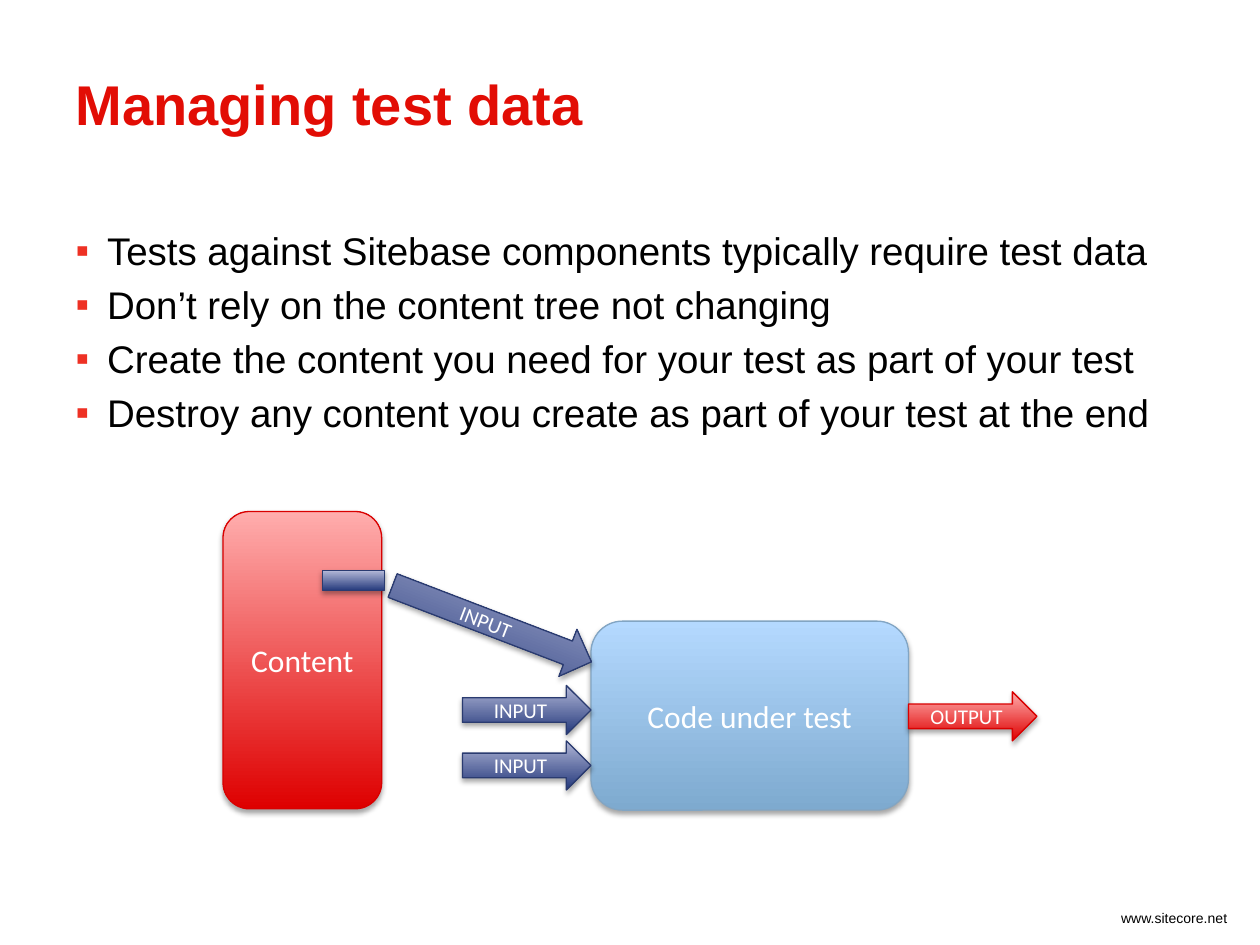
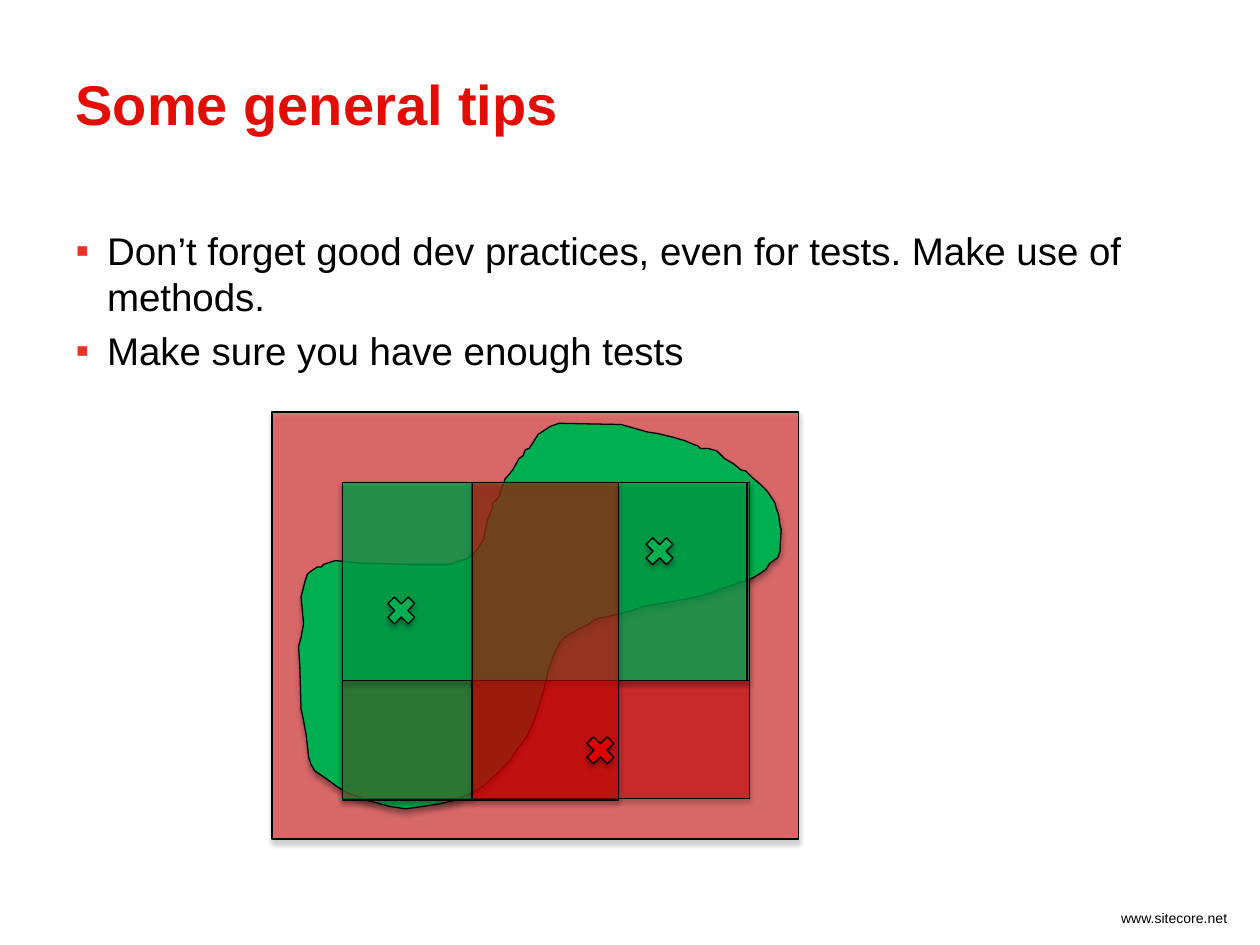
from dataclasses import dataclass

from lxml import etree
from pptx import Presentation
from pptx import util as u
from pptx.dml.color import RGBColor
from pptx.enum import shapes, text
from pptx.oxml import ns

EMU_PER_PX = 9144
SHAPE = shapes.MSO_SHAPE
ALIGN = text.PP_ALIGN
ANCHOR = text.MSO_ANCHOR


@dataclass(frozen=True)
class Theme:
    """Colours, fonts and type sizes shared by the slides."""

    title_red: str = "E20D05"
    bullet_red: str = "EE3124"
    black: str = "000000"
    white: str = "FFFFFF"
    red: str = "DE0000"
    green: str = "00B050"
    red_gradient: tuple = ("DE0000", "FFADAD", "D90000")
    navy_gradient: tuple = ("23387B", "B1B6D6", "2A3B70")
    sky_gradient: tuple = ("7EAACF", "B4D9FF", "82A5C3")
    text_font: str = "Arial"
    diagram_font: str = "Calibri"
    title_size: int = 32
    body_size: int = 22
    box_size: int = 18
    arrow_size: int = 12
    footer_size: int = 8
    line_width: float = 0.75


THEME = Theme()
SLIDE_SIZE = (1000, 750)
TITLE_BOX = (50, 50, 900, 109)
FOOTER_BOX = (450, 717, 534, 37)
FOOTER_TEXT = "www.sitecore.net"

COVERAGE_OUTLINE = [
    (23, 147), (26, 135), (28, 129), (30, 127), (36, 123), (39, 123), (41, 121),
    (47, 119), (50, 118), (61, 119), (69, 120), (108, 121), (141, 121), (149, 118),
    (154, 117), (159, 113), (163, 109), (166, 104), (168, 101), (169, 95), (170, 91),
    (171, 86), (173, 81), (175, 76), (175, 72), (178, 70), (180, 67), (182, 61),
    (184, 56), (185, 53), (187, 51), (191, 46), (196, 37), (199, 35), (201, 30),
    (204, 29), (208, 23), (211, 18), (220, 12), (222, 11), (228, 9), (277, 10),
    (291, 14), (298, 16), (305, 17), (318, 20), (328, 23), (335, 26), (338, 27),
    (340, 29), (346, 29), (353, 31), (359, 37), (366, 41), (372, 46), (376, 47),
    (381, 52), (387, 57), (393, 63), (399, 72), (400, 76), (402, 82), (403, 90),
    (404, 93), (403, 111), (401, 116), (395, 120), (392, 125), (386, 129), (381, 132),
    (369, 136), (358, 140), (341, 146), (325, 149), (309, 152), (296, 154), (284, 158),
    (268, 162), (258, 164), (250, 169), (240, 174), (232, 179), (228, 184), (223, 194),
    (219, 206), (215, 223), (212, 233), (208, 245), (202, 258), (195, 267), (189, 276),
    (184, 282), (173, 292), (165, 299), (159, 302), (146, 308), (133, 311), (120, 313),
    (106, 315), (93, 313), (75, 308), (59, 302), (51, 297), (43, 291), (34, 285),
    (31, 280), (29, 274), (27, 256), (24, 240), (23, 236), (22, 202), (21, 186),
    (23, 179), (25, 168),
]


def px(length):
    """Turn px into EMU."""
    return u.Emu(length * EMU_PER_PX)


def apply(target, values):
    """Set each named attribute on the target."""
    for name, value in values.items():
        setattr(target, name, value)


def place(shape, box):
    """Move and size a shape to a px box."""
    apply(shape, dict(zip(("left", "top", "width", "height"), map(px, box))))


def write(paragraph, words, size, color, font=THEME.text_font, bold=False):
    """Add one formatted run to a paragraph."""
    run = paragraph.add_run()
    run.text = words
    apply(run.font, {"name": font, "size": u.Pt(size), "bold": bold})
    run.font.color.rgb = RGBColor.from_string(color)


def add_bullet(paragraph):
    """Give a paragraph a hanging square bullet."""
    properties = paragraph._p.get_or_add_pPr()
    apply_indent = {"marL": px(25), "indent": -px(25)}
    for name, value in apply_indent.items():
        properties.set(name, str(value))
    color = etree.SubElement(properties, ns.qn("a:buClr"))
    etree.SubElement(color, ns.qn("a:srgbClr"), val=THEME.bullet_red)
    etree.SubElement(properties, ns.qn("a:buFont"), typeface=THEME.text_font)
    etree.SubElement(properties, ns.qn("a:buChar"), char="▪")


def add_text_slide(presentation, title, bullets, body_height):
    """Add a slide with its title, bullet list and footer."""
    slide = presentation.slides.add_slide(presentation.slide_layouts[1])
    heading, body = slide.placeholders
    footer = slide.shapes.add_textbox(*map(px, FOOTER_BOX))
    boxes = (TITLE_BOX, (50, 175, 900, body_height), FOOTER_BOX)
    for shape, box in zip((heading, body, footer), boxes):
        place(shape, box)
        apply(shape.text_frame, {
            "word_wrap": True,
            "auto_size": text.MSO_AUTO_SIZE.NONE,
            "vertical_anchor": ANCHOR.TOP,
        })

    paragraph = heading.text_frame.paragraphs[0]
    paragraph.alignment = ALIGN.LEFT
    write(paragraph, title, THEME.title_size, THEME.title_red, bold=True)

    for index, words in enumerate(bullets):
        frame = body.text_frame
        paragraph = frame.add_paragraph() if index else frame.paragraphs[0]
        add_bullet(paragraph)
        paragraph.space_before = u.Pt(4.5 if index else 0)
        write(paragraph, words, THEME.body_size, THEME.black)

    paragraph = footer.text_frame.paragraphs[0]
    paragraph.alignment = ALIGN.RIGHT
    write(paragraph, FOOTER_TEXT, THEME.footer_size, THEME.black)
    return slide


def finish(shape, line_color):
    """Give a shape its outline and soft drop shadow."""
    shape.line.color.rgb = RGBColor.from_string(line_color)
    shape.line.width = u.Pt(THEME.line_width)
    shape.shadow.inherit = False
    effects = shape.element.spPr.find(ns.qn("a:effectLst"))
    shadow = etree.SubElement(
        effects, ns.qn("a:outerShdw"), blurRad=str(u.Pt(3.1)),
        dist=str(u.Pt(1.8)), dir="5400000", rotWithShape="0")
    color = etree.SubElement(shadow, ns.qn("a:srgbClr"), val=THEME.black)
    etree.SubElement(color, ns.qn("a:alpha"), val="35000")


def fill_flat(shape, color, opacity=100):
    """Fill a shape with one colour and outline it in black."""
    shape.fill.solid()
    shape.fill.fore_color.rgb = RGBColor.from_string(color)
    if opacity < 100:
        solid = shape.element.spPr.find(ns.qn("a:solidFill"))
        etree.SubElement(solid[0], ns.qn("a:alpha"), val=str(opacity * 1000))
    finish(shape, THEME.black)


def fill_gradient(shape, gradient):
    """Fill a shape from dark at the bottom to light at the top."""
    dark, light, line_color = gradient
    shape.fill.gradient()
    shape.fill.gradient_angle = 90
    for stop, color in zip(shape.fill.gradient_stops, (dark, light)):
        stop.color.rgb = RGBColor.from_string(color)
    finish(shape, line_color)


def add_preset(slide, kind, origin, box):
    """Add a preset shape in a box relative to the origin."""
    left, top, width, height = box
    bounds = (origin[0] + left, origin[1] + top, width, height)
    return slide.shapes.add_shape(kind, *map(px, bounds))


def draw_data_flow(slide, box):
    """Draw content and inputs flowing through the code under test."""
    box_size, arrow_size = THEME.box_size, THEME.arrow_size
    navy, red, sky = THEME.navy_gradient, THEME.red_gradient, THEME.sky_gradient
    rounded, arrow = SHAPE.ROUNDED_RECTANGLE, SHAPE.RIGHT_ARROW
    parts = [
        (rounded, (292, 87, 252, 150), sky, "Code under test", box_size, 0),
        (arrow, (190, 138, 102, 39), navy, "INPUT", arrow_size, 0),
        (arrow, (190, 182, 102, 39), navy, "INPUT", arrow_size, 0),
        (arrow, (544, 143, 102, 39), red, "OUTPUT", arrow_size, 0),
        (rounded, (0, 0, 126, 236), red, "Content", box_size, 0),
        (arrow, (129, 69, 169, 40), navy, "INPUT", arrow_size, 21),
        (SHAPE.RECTANGLE, (79, 47, 49, 16), navy, "", arrow_size, 0),
    ]
    for kind, part_box, gradient, label, size, rotation in parts:
        shape = add_preset(slide, kind, box, part_box)
        shape.rotation = rotation
        fill_gradient(shape, gradient)
        if label:
            shape.text_frame.vertical_anchor = ANCHOR.MIDDLE
            paragraph = shape.text_frame.paragraphs[0]
            paragraph.alignment = ALIGN.CENTER
            write(paragraph, label, size, THEME.white, THEME.diagram_font)


def draw_coverage_map(slide, box):
    """Draw the working region, the tested zones and the test points."""
    left, top, width, height = box
    background = add_preset(slide, SHAPE.RECTANGLE, box, (0, 0, width, height))
    fill_flat(background, THEME.red, 50)

    builder = slide.shapes.build_freeform(*COVERAGE_OUTLINE[0], scale=EMU_PER_PX)
    builder.add_line_segments(COVERAGE_OUTLINE[1:], close=True)
    fill_flat(builder.convert_to_shape(px(left), px(top)), THEME.green)

    zone, cross = (SHAPE.RECTANGLE, 50), (SHAPE.MATH_MULTIPLY, 100)
    parts = [
        (zone, (56, 213, 323, 94), THEME.red),
        (zone, (56, 56, 102, 252), THEME.green),
        (zone, (56, 56, 323, 157), THEME.green),
        (zone, (275, 56, 102, 157), THEME.green),
        (cross, (87, 142, 31, 31), THEME.green),
        (zone, (159, 56, 116, 252), THEME.red),
        (cross, (292, 95, 31, 31), THEME.green),
        (cross, (245, 253, 31, 31), THEME.red),
    ]
    for (kind, opacity), part_box, color in parts:
        fill_flat(add_preset(slide, kind, box, part_box), color, opacity)


def main():
    """Build both slides and save them."""
    presentation = Presentation()
    apply(presentation, dict(zip(("slide_width", "slide_height"), map(px, SLIDE_SIZE))))

    slide = add_text_slide(presentation, "Managing test data", [
        "Tests against Sitebase components typically require test data",
        "Don’t rely on the content tree not changing",
        "Create the content you need for your test as part of your test",
        "Destroy any content you create as part of your test at the end",
    ], 187)
    draw_data_flow(slide, (177, 406, 646, 237))

    slide = add_text_slide(presentation, "Some general tips", [
        "Don’t forget good dev practices, even for tests. Make use of methods.",
        "Make sure you have enough tests",
    ], 161)
    draw_coverage_map(slide, (216, 327, 418, 339))

    presentation.save("out.pptx")


if __name__ == "__main__":
    main()
